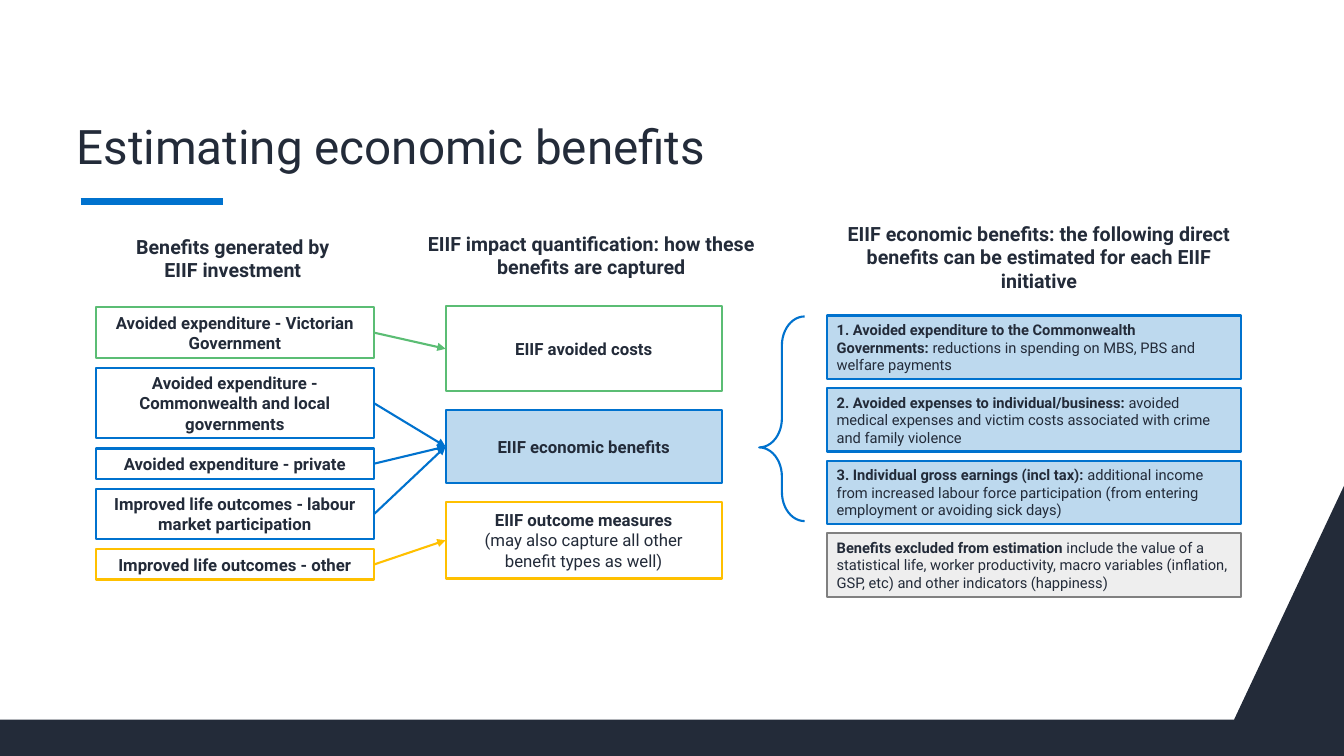
from lxml import etree
from pptx import Presentation
from pptx.dml.color import RGBColor
from pptx.enum.shapes import MSO_CONNECTOR, MSO_SHAPE
from pptx.enum.text import MSO_ANCHOR, PP_ALIGN
from pptx.oxml.ns import qn
from pptx.util import Inches, Pt

RECTANGLE, LEFT_BRACE = MSO_SHAPE.RECTANGLE, MSO_SHAPE.LEFT_BRACE
STRAIGHT = MSO_CONNECTOR.STRAIGHT
TOP, MIDDLE, BOTTOM = MSO_ANCHOR.TOP, MSO_ANCHOR.MIDDLE, MSO_ANCHOR.BOTTOM
LEFT, CENTER = PP_ALIGN.LEFT, PP_ALIGN.CENTER
LEFT_SIDE, RIGHT_SIDE = 1, 3

FONT = "Roboto"
COLORS = {
    "navy": "232B39", "blue": "0072CE", "tint": "0070C0", "green": "5BBD74",
    "yellow": "FFC000", "white": "FFFFFF", "gray": "808080", "silver": "BFBFBF",
}
TINT_ALPHA = "26000"

# text, outline colour, height, index of the measure that captures it
BENEFITS = [
    ("Avoided expenditure - Victorian Government", "green", 0.5, 0),
    ("Avoided expenditure - Commonwealth and local governments", "blue", 0.7, 1),
    ("Avoided expenditure - private", "blue", 0.3, 1),
    ("Improved life outcomes - labour market participation", "blue", 0.5, 1),
    ("Improved life outcomes - other", "yellow", 0.3, 2),
]
# runs, outline colour, fill colour, top, height
MEASURES = [
    ([("EIIF avoided costs", True)], "green", "white", 3.04, 0.84),
    ([("EIIF economic benefits", True)], "blue", "tint", 4.07, 0.72),
    ([("EIIF outcome measures\n", True),
      ("(may also capture all other\nbenefit types as well)", False)],
     "yellow", "white", 4.98, 0.76),
]
# bold lead, explanation, outline colour, fill colour
ESTIMATES = [
    ("1. Avoided expenditure to the Commonwealth Governments: ",
     "reductions in spending on MBS, PBS and welfare payments", "blue", "tint"),
    ("2. Avoided expenses to individual/business: ",
     "avoided medical expenses and victim costs associated with crime and family violence",
     "blue", "tint"),
    ("3. Individual gross earnings (incl tax): ",
     "additional income from increased labour force participation "
     "(from entering employment or avoiding sick days)", "blue", "tint"),
    ("Benefits excluded from estimation ",
     "include the value of a statistical life, worker productivity, macro variables "
     "(inflation, GSP, etc) and other indicators (happiness)", "gray", "silver"),
]
# text, left, top, width, height
HEADINGS = [
    ("Benefits generated by\nEIIF investment", 0.93, 2.28, 2.76, 0.57),
    ("EIIF impact quantification: how these benefits are captured", 4.14, 2.25, 3.45, 0.57),
    ("EIIF economic benefits: the following direct benefits can be estimated "
     "for each EIIF initiative", 8.26, 2.15, 4.09, 0.81),
]


def rgb(name):
    return RGBColor.from_string(COLORS[name])


def inches(*values):
    return [Inches(value) for value in values]


def write_text(shape, runs, size, align=CENTER, anchor=MIDDLE):
    """Fill a shape with one paragraph of (text, bold) runs; newlines become line breaks."""
    frame = shape.text_frame
    frame.word_wrap = True
    frame.vertical_anchor = anchor
    paragraph = frame.paragraphs[0]
    paragraph.alignment = align
    for text, bold in runs:
        for index, line in enumerate(text.split("\n")):
            if index:
                paragraph.add_line_break()
            if not line:
                continue
            run = paragraph.add_run()
            run.text = line
            for name, value in {"name": FONT, "size": Pt(size), "bold": bold}.items():
                setattr(run.font, name, value)
            run.font.color.rgb = rgb("navy")
    return paragraph


def add_text(slide, box, runs, size, align=CENTER, anchor=TOP):
    shape = slide.shapes.add_textbox(*inches(*box))
    return shape, write_text(shape, runs, size, align, anchor)


def add_box(slide, box, outline, fill):
    shape = slide.shapes.add_shape(RECTANGLE, *inches(*box))
    shape.shadow.inherit = False
    shape.fill.solid()
    shape.fill.fore_color.rgb = rgb(fill)
    if fill != "white":
        color = shape.fill._xPr.find(".//" + qn("a:srgbClr"))
        etree.SubElement(color, qn("a:alpha"), val=TINT_ALPHA)
    shape.line.color.rgb = rgb(outline)
    shape.line.width = Pt(1.5)
    return shape


def add_line(slide, start, end, color, width):
    line = slide.shapes.add_connector(STRAIGHT, *inches(*start, *end))
    line.line.color.rgb = rgb(color)
    line.line.width = Pt(width)
    etree.SubElement(line._element.spPr, qn("a:effectLst"))
    return line


def add_arrow(slide, source, target, color):
    arrow = add_line(slide, (0, 0), (1, 1), color, 1.5)
    arrow.begin_connect(source, RIGHT_SIDE)
    arrow.end_connect(target, LEFT_SIDE)
    etree.SubElement(arrow.line._get_or_add_ln(), qn("a:tailEnd"), type="triangle")


def add_footer(slide):
    corners = [(0, 7.14), (12.24, 7.14), (13.33, 4.82), (13.33, 7.5), (0, 7.5)]
    points = [inches(*corner) for corner in corners]
    builder = slide.shapes.build_freeform(*points[0])
    builder.add_line_segments(points[1:], close=True)
    footer = builder.convert_to_shape()
    footer.shadow.inherit = False
    footer.fill.solid()
    footer.fill.fore_color.rgb = rgb("navy")
    footer.line.fill.background()


def add_title(slide):
    add_line(slide, (0.8, 2), (2.21, 2), "blue", 4.5)
    title, paragraph = add_text(slide, (0.72, 1.22, 12.16, 0.56),
                                [("Estimating economic benefits", False)], 34, LEFT, BOTTOM)
    title.text_frame.margin_left = title.text_frame.margin_right = Inches(0.04)
    paragraph.line_spacing = 0.9


def add_brace(slide):
    brace = slide.shapes.add_shape(LEFT_BRACE, *inches(7.53, 3.14, 0.45, 2.03))
    brace.shadow.inherit = False
    brace.adjustments[0] = brace.adjustments[1] = 0.64
    brace.fill.background()
    brace.line.color.rgb = rgb("blue")
    brace.line.width = Pt(1.5)


def main():
    presentation = Presentation()
    presentation.slide_width, presentation.slide_height = inches(13.33, 7.5)
    slide = presentation.slides.add_slide(presentation.slide_layouts[6])
    add_footer(slide)
    add_title(slide)
    for text, *box in HEADINGS:
        add_text(slide, box, [(text, True)], 14)

    measures = []
    for runs, outline, fill, top, height in MEASURES:
        measure = add_box(slide, (4.42, top, 2.74, height), outline, fill)
        write_text(measure, runs, 12)
        measures.append(measure)

    top = 3.05
    for text, outline, height, target in BENEFITS:
        benefit = add_box(slide, (0.95, top, 2.76, height), outline, "white")
        write_text(benefit, [(text, True)], 12)
        add_arrow(slide, benefit, measures[target], outline)
        top += height + 0.1

    add_brace(slide)
    for row, (lead, explanation, outline, fill) in enumerate(ESTIMATES):
        estimate = add_box(slide, (8.2, 3.13 + 0.72 * row, 4.11, 0.63), outline, fill)
        write_text(estimate, [(lead, True), (explanation, False)], 10.5, LEFT)

    presentation.save("out.pptx")


if __name__ == "__main__":
    main()
